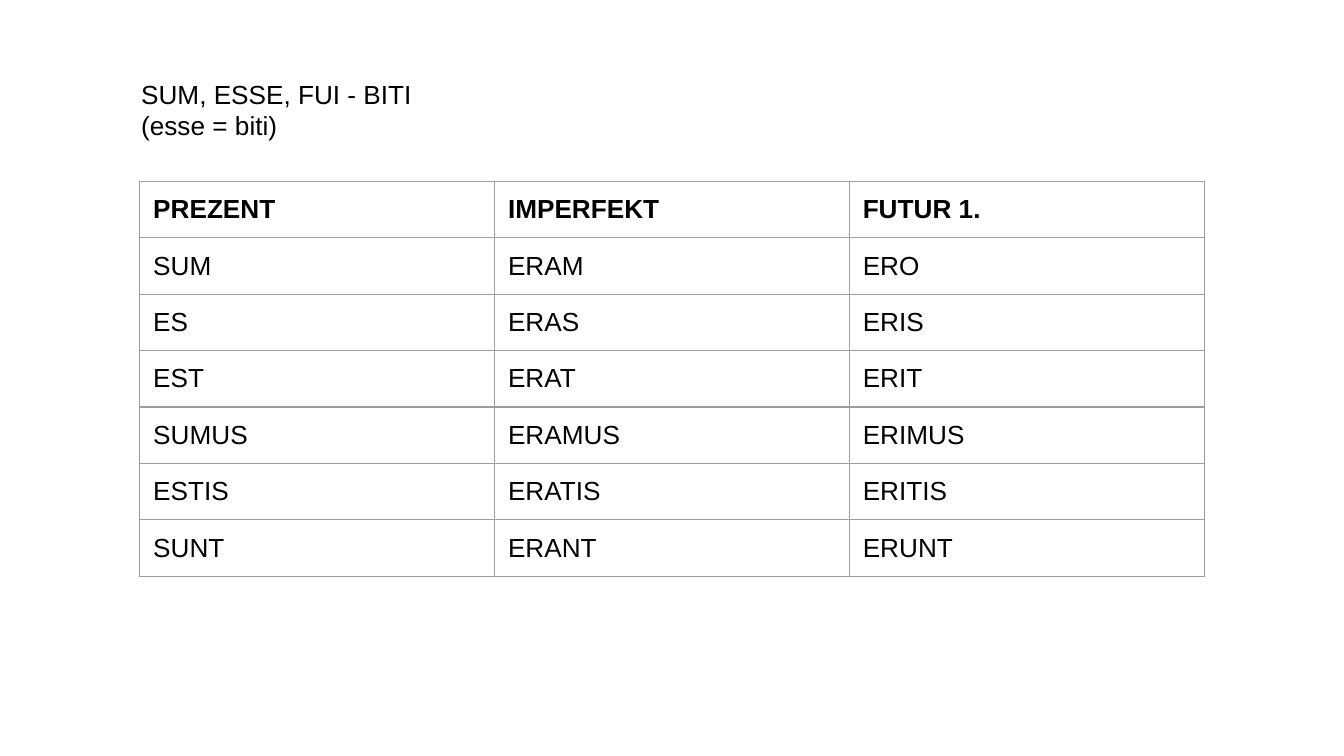
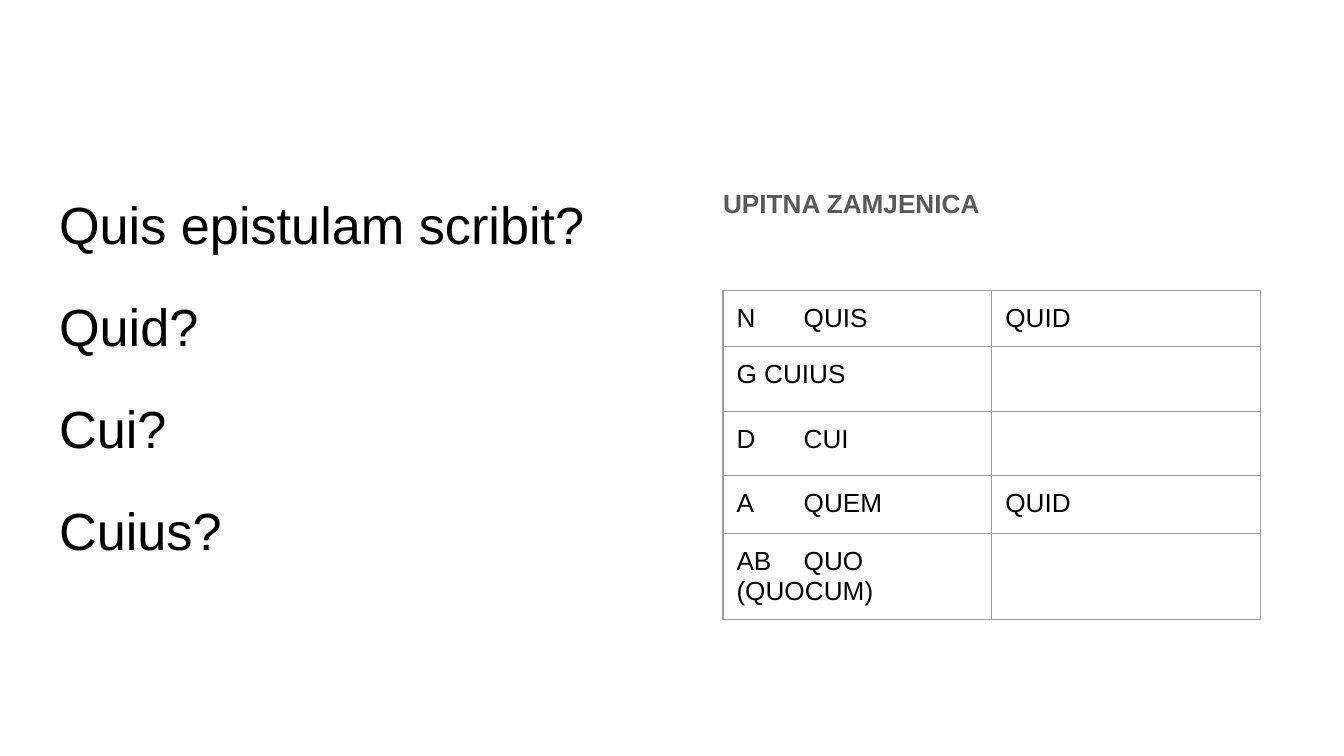
from lxml import etree
from pptx import Presentation
from pptx.dml.color import RGBColor
from pptx.enum.text import MSO_ANCHOR, MSO_AUTO_SIZE, PP_ALIGN
from pptx.oxml.ns import qn
from pptx.util import Inches, Pt

TOP, LEFT, FIXED = MSO_ANCHOR.TOP, PP_ALIGN.LEFT, MSO_AUTO_SIZE.NONE
TITLE_ONLY, TWO_PARTS = 5, 3
COLORS = {"page": "FFFFFF", "ink": "000000", "soft": "595959", "rule": "9E9E9E"}
FONT = "Arial"
PAD = Inches(0.1)

VERBS = [
    ["PREZENT", "IMPERFEKT", "FUTUR 1."],
    ["SUM", "ERAM", "ERO"],
    ["ES", "ERAS", "ERIS"],
    ["EST", "ERAT", "ERIT"],
    ["SUMUS", "ERAMUS", "ERIMUS"],
    ["ESTIS", "ERATIS", "ERITIS"],
    ["SUNT", "ERANT", "ERUNT"],
]
CASES = [
    ["N\tQUIS", "QUID"],
    ["G CUIUS", ""],
    ["D\tCUI", ""],
    ["A\tQUEM", "QUID"],
    ["AB\tQUO (QUOCUM)", ""],
]


def rgb(name):
    return RGBColor.from_string(COLORS[name])


def write(frame, text, size=14, color="ink", bold=False, line=1.0, gap=0, last=0, tab=None):
    """Fill a frame, one paragraph per line of text; tab is a stop in inches."""
    rows = text.split("\n")
    for i, row in enumerate(rows):
        para = frame.paragraphs[0] if i == 0 else frame.add_paragraph()
        para.alignment = LEFT
        para.line_spacing = line
        para.space_before = Pt(gap if i else 0)
        para.space_after = Pt(last if i == len(rows) - 1 else 0)
        props = para._p.get_or_add_pPr()
        props.set("marL", "0")
        props.set("indent", "0")
        etree.SubElement(props, qn("a:buNone"))
        if tab:
            stops = etree.SubElement(props, qn("a:tabLst"))
            etree.SubElement(stops, qn("a:tab"), pos=str(Inches(tab)), algn="l")
        if not row:
            etree.SubElement(para._p, qn("a:endParaRPr"), sz=str(size * 100))
            continue
        run = para.add_run()
        run.text = row
        font = run.font
        font.name, font.size, font.bold = FONT, Pt(size), bold
        font.color.rgb = rgb(color)


def pad(item):
    item.margin_left = item.margin_right = item.margin_top = item.margin_bottom = PAD


def edge(cell):
    """Draw the four thin borders of a cell."""
    props = cell._tc.get_or_add_tcPr()
    for i, side in enumerate(("lnL", "lnR", "lnT", "lnB")):
        line = etree.Element(qn(f"a:{side}"), w=str(Pt(0.75)))
        fill = etree.SubElement(line, qn("a:solidFill"))
        etree.SubElement(fill, qn("a:srgbClr"), val=COLORS["rule"])
        props.insert(i, line)


class Deck:
    def __init__(self):
        self.prs = Presentation()
        wide = Inches(10)
        self.prs.slide_width, self.prs.slide_height = wide, wide * 9 // 16
        self.slide = None

    def page(self, layout):
        self.slide = self.prs.slides.add_slide(self.prs.slide_layouts[layout])
        fill = self.slide.background.fill
        fill.solid()
        fill.fore_color.rgb = rgb("page")

    def place(self, index, text, x, y, w, h, **style):
        """Move and fill the placeholder with this index."""
        shape = self.slide.placeholders[index]
        shape.left, shape.top, shape.width, shape.height = map(Inches, (x, y, w, h))
        frame = shape.text_frame
        frame.word_wrap, frame.auto_size = True, FIXED
        frame.vertical_anchor = TOP
        pad(frame)
        write(frame, text, **style)

    def drop(self, index):
        node = self.slide.placeholders[index]._element
        node.getparent().remove(node)

    def table(self, data, x, y, wide, highs, head=False, tab=None):
        cols = len(data[0])
        grid = self.slide.shapes.add_table(
            len(data), cols, Inches(x), Inches(y), Inches(wide * cols), Inches(sum(highs))
        ).table
        grid.first_row, grid.horz_banding = head, False
        for col in grid.columns:
            col.width = Inches(wide)
        for r, (row, high) in enumerate(zip(data, highs)):
            grid.rows[r].height = Inches(high)
            for c, text in enumerate(row):
                cell = grid.cell(r, c)
                cell.vertical_anchor = TOP
                pad(cell)
                cell.fill.background()
                edge(cell)
                write(cell.text_frame, text, bold=head and r == 0,
                      tab=tab if "\t" in text else None)

    def verbs(self):
        self.page(TITLE_ONLY)
        self.table(VERBS, 1.04, 1.35, 2.64, [0.42] * len(VERBS), head=True)
        self.place(0, "SUM, ESSE, FUI - BITI\n(esse = biti)", 0.95, 0.48, 7.44, 0.61)

    def cases(self):
        self.page(TWO_PARTS)
        self.drop(0)
        top, wide, high = 1.26, 4.37, 3.74
        self.place(1, "Quis epistulam scribit?\nQuid?\nCui?\nCuius?", 0.34, top, wide, high,
                   size=28, line=1.15, gap=16, last=16)
        self.place(2, "UPITNA ZAMJENICA", 5.28, top, wide, high,
                   color="soft", bold=True, line=1.15)
        self.table(CASES, 5.38, 2.16, 2, [0.42, 0.48, 0.48, 0.43, 0.64], tab=0.43)


def main():
    deck = Deck()
    deck.verbs()
    deck.cases()
    deck.prs.save("out.pptx")


if __name__ == "__main__":
    main()
